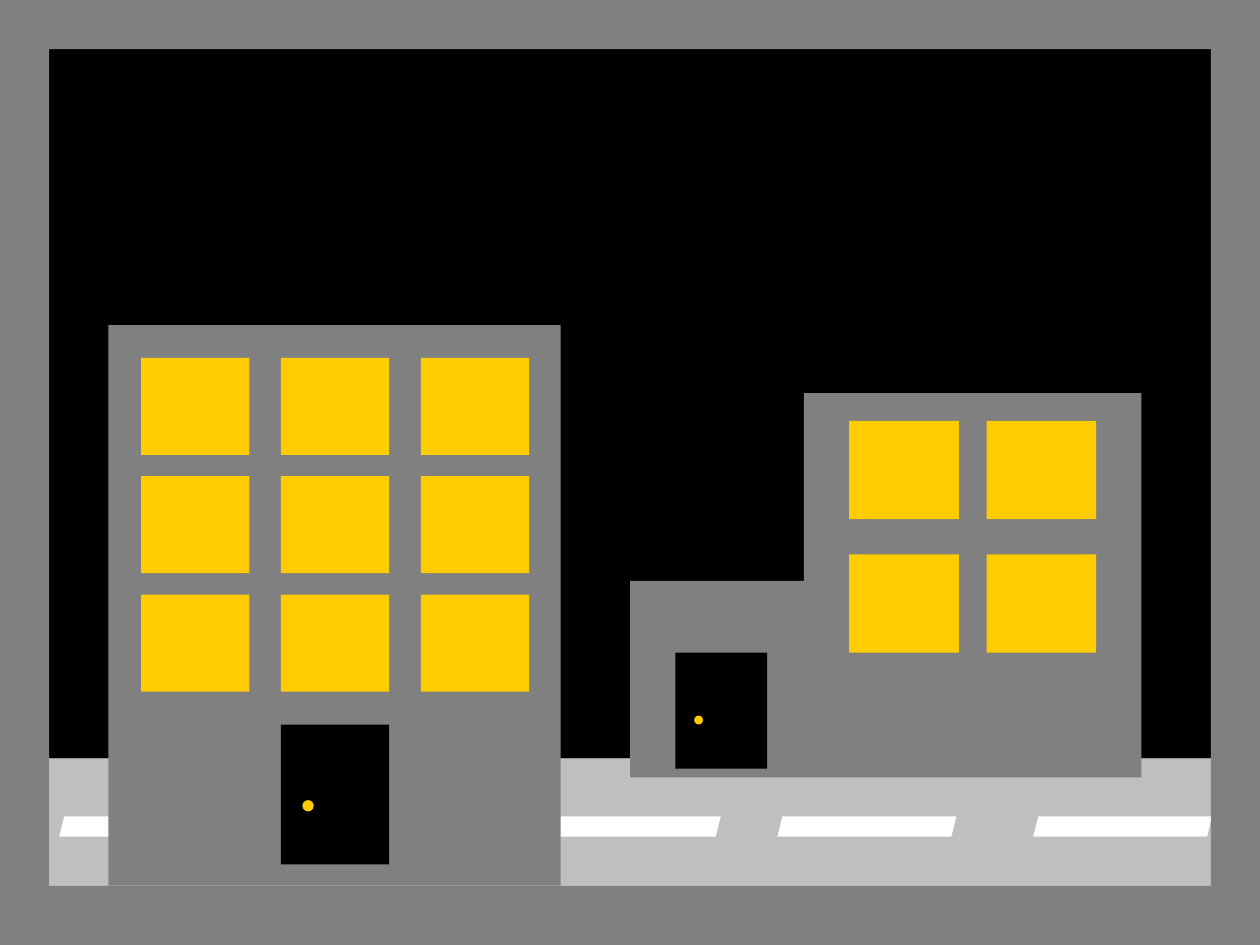
"""Build a night street scene with two lit buildings."""
from dataclasses import dataclass
from itertools import product
from typing import Union

import pptx
import pptx.dml.color
import pptx.enum.shapes
import pptx.shapes.shapetree
import pptx.slide
import pptx.util

Inches = pptx.util.Inches
Kind = pptx.enum.shapes.MSO_SHAPE
ShapeTree = Union[pptx.shapes.shapetree.SlideShapes, pptx.shapes.shapetree.GroupShapes]

WIDTH, HEIGHT = 10, 7.5
ROAD_TOP, ROAD_BOTTOM = 6.02, 7.03
FRAME = 0.39
BLACK, GRAY, ROAD, YELLOW, WHITE = "000000", "808080", "BFBFBF", "FFCC00", "FFFFFF"


@dataclass(frozen=True)
class Box:
    left: float
    top: float
    width: float
    height: float


@dataclass(frozen=True)
class WindowGrid:
    first: Box
    columns: int
    rows: int
    column_step: float
    row_step: float


@dataclass(frozen=True)
class Building:
    walls: tuple[Box, ...]
    windows: WindowGrid
    door: Box
    knob: Box


SMALL_BUILDING = Building(
    walls=(Box(5, 4.61, 1.38, 1.56), Box(6.38, 3.12, 2.68, 3.05)),
    windows=WindowGrid(Box(6.74, 3.34, 0.87, 0.78), 2, 2, 1.09, 1.06),
    door=Box(5.36, 5.18, 0.73, 0.92),
    knob=Box(5.51, 5.68, 0.07, 0.07),
)
LARGE_BUILDING = Building(
    walls=(Box(0.86, 2.58, 3.59, 4.45),),
    windows=WindowGrid(Box(1.12, 2.84, 0.86, 0.77), 3, 3, 1.11, 0.94),
    door=Box(2.23, 5.75, 0.86, 1.11),
    knob=Box(2.4, 6.35, 0.09, 0.09),
)


def color(value: str) -> pptx.dml.color.RGBColor:
    return pptx.dml.color.RGBColor.from_string(value)


def draw(shapes: ShapeTree, box: Box, fill: str, kind: Kind = Kind.RECTANGLE) -> None:
    shape = shapes.add_shape(
        kind, Inches(box.left), Inches(box.top), Inches(box.width), Inches(box.height)
    )
    shape.shadow.inherit = False
    shape.fill.solid()
    shape.fill.fore_color.rgb = color(fill)
    shape.line.fill.background()


def draw_stripe(shapes: ShapeTree, left: float) -> None:
    draw(shapes, Box(left, 6.48, 1.42, 0.16), WHITE, Kind.PARALLELOGRAM)


def draw_building(slide: pptx.slide.Slide, building: Building) -> None:
    shapes = slide.shapes.add_group_shape().shapes
    for wall in building.walls:
        draw(shapes, wall, GRAY)
    grid = building.windows
    for row, column in product(range(grid.rows), range(grid.columns)):
        left = grid.first.left + column * grid.column_step
        top = grid.first.top + row * grid.row_step
        draw(shapes, Box(left, top, grid.first.width, grid.first.height), YELLOW)
    draw(shapes, building.door, BLACK)
    draw(shapes, building.knob, YELLOW, Kind.FLOWCHART_CONNECTOR)


def main() -> None:
    presentation = pptx.Presentation()
    presentation.slide_width = Inches(WIDTH)
    presentation.slide_height = Inches(HEIGHT)
    slide = presentation.slides.add_slide(presentation.slide_layouts[6])
    shapes = slide.shapes

    draw(shapes, Box(0, ROAD_TOP, WIDTH, ROAD_BOTTOM - ROAD_TOP), ROAD)
    draw(shapes, Box(0, ROAD_BOTTOM, WIDTH, HEIGHT - ROAD_BOTTOM), GRAY)
    draw(shapes, Box(0, 0, WIDTH, ROAD_TOP), BLACK)
    draw(shapes, Box(0, 0, FRAME, HEIGHT), GRAY)
    draw(shapes, Box(0, 0, WIDTH, FRAME), GRAY)

    draw_building(slide, SMALL_BUILDING)
    for left in (8.2, 6.17):
        draw_stripe(shapes, left)
    draw(shapes, Box(WIDTH - FRAME, 0, FRAME, HEIGHT), GRAY)
    for left in (4.3, 0.47):
        draw_stripe(shapes, left)
    draw_building(slide, LARGE_BUILDING)

    presentation.save("out.pptx")


if __name__ == "__main__":
    main()
